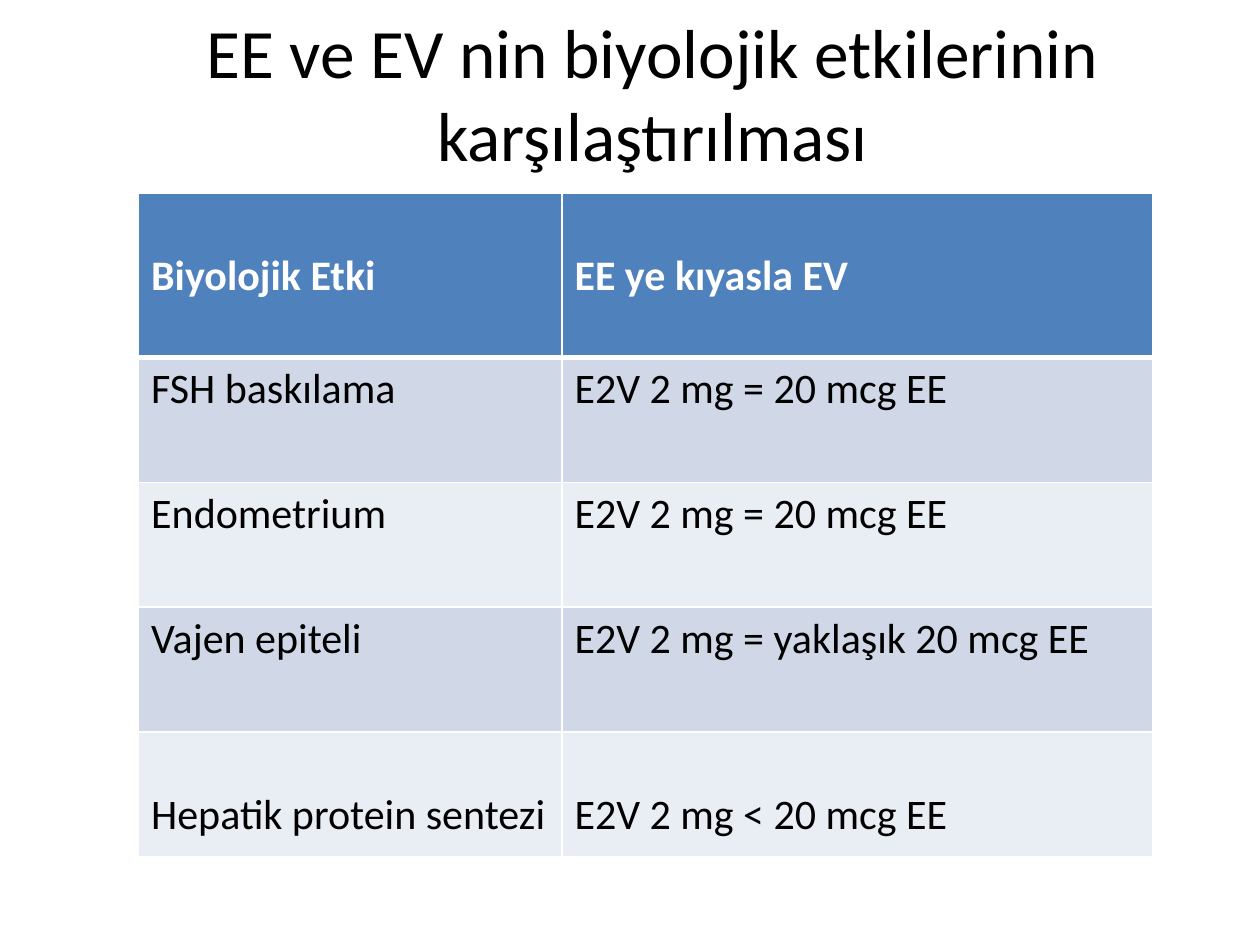
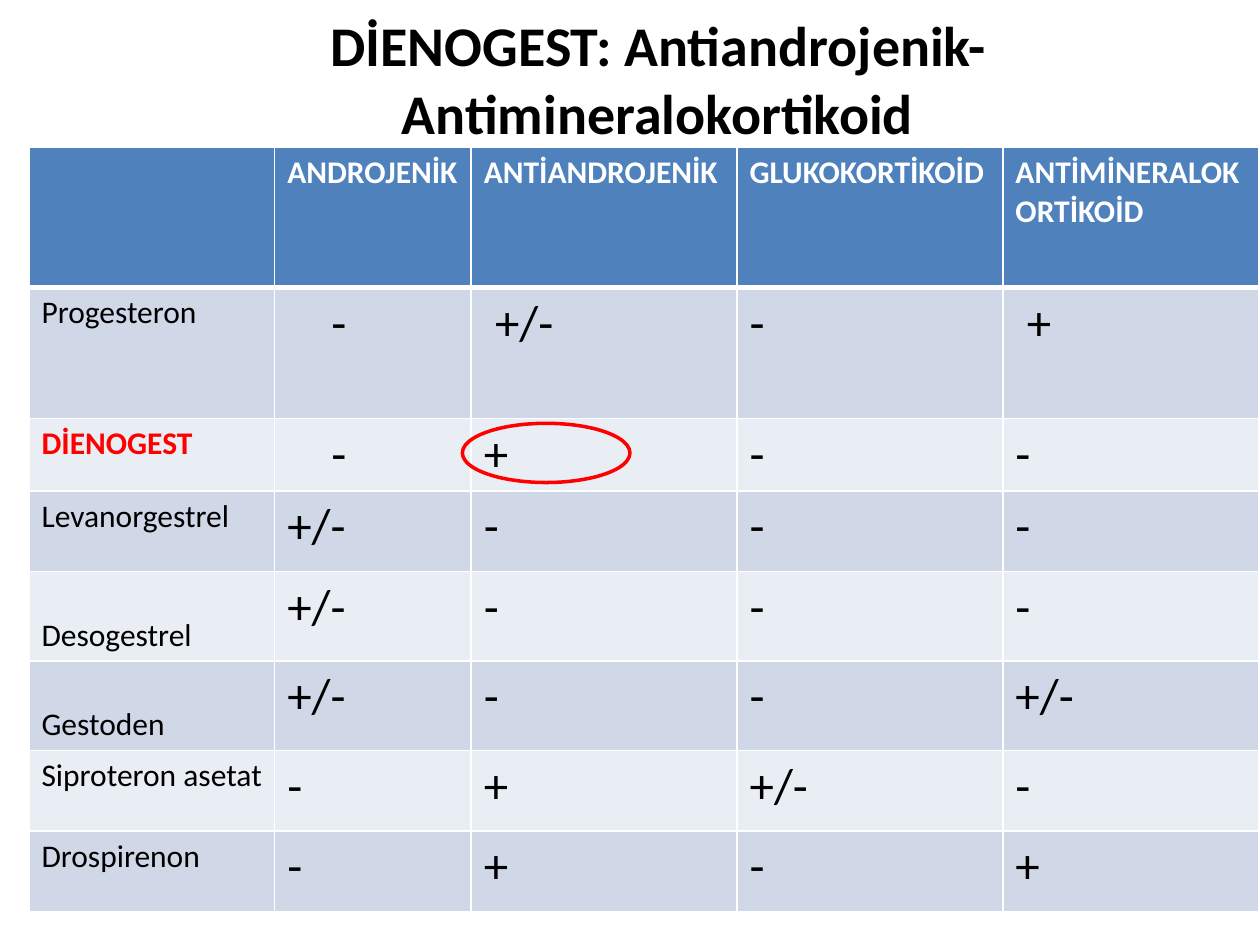
from dataclasses import dataclass
from typing import NamedTuple

from lxml import etree
from pptx import Presentation
from pptx import util as u
from pptx.dml.color import RGBColor
from pptx.enum import shapes, text
from pptx.oxml.ns import qn

SLIDE_WIDTH, SLIDE_HEIGHT = u.Inches(10), u.Inches(7.5)
GRID_COLUMNS, GRID_ROWS = 100, 75
TITLE_ONLY = 5


@dataclass(frozen=True)
class Theme:
    font: str = "Calibri"
    ink: str = "000000"
    paper: str = "FFFFFF"
    header: str = "4F81BD"
    bands: tuple[str, str] = ("D0D8E8", "E9EDF4")
    accent: str = "FF0000"
    title: float = 39.6
    compact_title: float = 32
    effect: float = 24
    hormone: float = 18
    sign: float = 28
    line_height: float = 1.22
    rule: float = 1
    header_rule: float = 3
    ring: float = 2


THEME = Theme()


def across(columns: float) -> int:
    return round(SLIDE_WIDTH * columns / GRID_COLUMNS)


def down(rows: float) -> int:
    return round(SLIDE_HEIGHT * rows / GRID_ROWS)


class Area(NamedTuple):
    """A rectangle in grid columns and rows."""
    left: float
    top: float
    width: float
    height: float

    def lengths(self) -> tuple[int, int, int, int]:
        return across(self.left), down(self.top), across(self.width), down(self.height)


class Entry(NamedTuple):
    """Table text; lowered starts one line down, indent is in grid columns."""
    wording: str
    size: float
    color: str = THEME.ink
    bold: bool = False
    lowered: bool = False
    indent: float = 0


class Grid(NamedTuple):
    left: float
    top: float
    columns: list[float]
    rows: list[float]
    entries: list[list[Entry]]


def write(frame, wording: str, *, size: float, color: str = THEME.ink,
          bold: bool = False, align=text.PP_ALIGN.LEFT) -> None:
    paragraph = frame.paragraphs[0]
    paragraph.alignment = align
    run = paragraph.add_run()
    run.text = wording
    run.font.name = THEME.font
    run.font.size = u.Pt(size)
    run.font.bold = bold
    run.font.color.rgb = RGBColor.from_string(color)


def add_titled_slide(deck, wording: str, area: Area, *, size: float, bold: bool = False):
    slide = deck.slides.add_slide(deck.slide_layouts[TITLE_ONLY])
    title = slide.shapes.title
    title.left, title.top, title.width, title.height = area.lengths()
    frame = title.text_frame
    frame.word_wrap = True
    frame.auto_size = text.MSO_AUTO_SIZE.NONE
    frame.vertical_anchor = text.MSO_ANCHOR.MIDDLE
    write(frame, wording, size=size, bold=bold, align=text.PP_ALIGN.CENTER)
    return slide


def rule_cell(cell, *, top: float, bottom: float) -> None:
    properties = cell._tc.get_or_add_tcPr()
    widths = {"lnL": THEME.rule, "lnR": THEME.rule, "lnT": top, "lnB": bottom}
    for side, width in widths.items():
        line = etree.SubElement(properties, qn(f"a:{side}"), w=str(u.Pt(width)))
        fill = etree.SubElement(line, qn("a:solidFill"))
        etree.SubElement(fill, qn("a:srgbClr"), val=THEME.paper)


def fill_cell(cell, entry: Entry, row: int) -> None:
    rule_cell(cell, top=THEME.header_rule if row == 1 else THEME.rule,
              bottom=THEME.header_rule if row == 0 else THEME.rule)
    cell.fill.solid()
    color = THEME.bands[(row - 1) % 2] if row else THEME.header
    cell.fill.fore_color.rgb = RGBColor.from_string(color)
    if entry.lowered:
        cell.margin_top += u.Pt(entry.size * THEME.line_height)
    cell.margin_left += across(entry.indent)
    if entry.wording:
        write(cell.text_frame, entry.wording, size=entry.size,
              color=entry.color, bold=entry.bold)


def add_grid(slide, grid: Grid) -> None:
    area = Area(grid.left, grid.top, sum(grid.columns), sum(grid.rows))
    table = slide.shapes.add_table(len(grid.rows), len(grid.columns), *area.lengths()).table
    for column, width in zip(table.columns, grid.columns):
        column.width = across(width)
    for row, height in zip(table.rows, grid.rows):
        row.height = down(height)
    for row, entries in enumerate(grid.entries):
        for column, entry in enumerate(entries):
            fill_cell(table.cell(row, column), entry, row)


def add_ring(slide, area: Area) -> None:
    ring = slide.shapes.add_shape(shapes.MSO_SHAPE.OVAL, *area.lengths())
    ring.shadow.inherit = False
    ring.fill.background()
    ring.line.color.rgb = RGBColor.from_string(THEME.accent)
    ring.line.width = u.Pt(THEME.ring)


def header_row(*wordings: str, size: float, lowered: bool = False) -> list[Entry]:
    return [Entry(wording, size, THEME.paper, True, lowered) for wording in wordings]


def effect_row(effect: str, comparison: str, lowered: bool = False) -> list[Entry]:
    return [Entry(wording, THEME.effect, lowered=lowered) for wording in (effect, comparison)]


def hormone_row(hormone: str, signs: str, *, indents: tuple[float, ...] = (0, 0, 0, 0),
                lowered: bool = False, marked: bool = False) -> list[Entry]:
    """Name a hormone and its four signs, which are split at spaces."""
    color = THEME.accent if marked else THEME.ink
    name = Entry(hormone, THEME.hormone, color, marked, lowered)
    return [name] + [Entry(sign, THEME.sign, indent=indent)
                     for sign, indent in zip(signs.split(), indents)]


def add_effects_slide(deck) -> None:
    slide = add_titled_slide(deck, "EE ve EV nin biyolojik etkilerinin karşılaştırılması",
                             Area(8.6, 3, 86.4, 8.7), size=THEME.title)
    add_grid(slide, Grid(11, 15.3, [33.6, 46.9], [13.1] + [9.9] * 4, [
        header_row("Biyolojik Etki", "EE ye kıyasla EV", size=THEME.effect, lowered=True),
        effect_row("FSH baskılama", "E2V 2 mg = 20 mcg EE"),
        effect_row("Endometrium", "E2V 2 mg = 20 mcg EE"),
        effect_row("Vajen epiteli", "E2V 2 mg = yaklaşık 20 mcg EE"),
        effect_row("Hepatik protein sentezi", "E2V 2 mg < 20 mcg EE", lowered=True),
    ]))


def add_dienogest_slide(deck) -> None:
    slide = add_titled_slide(deck, "DİENOGEST: Antiandrojenik-Antimineralokortikoid",
                             Area(9.4, 3, 85.6, 6.4), size=THEME.compact_title, bold=True)
    add_grid(slide, Grid(
        2.3, 11.7, [19.5, 15.6, 21.1, 21.1, 20.3],
        [11.1, 10.4, 5.7, 6.4, 7.1, 7.1, 6.4, 6.4], [
            header_row("", "ANDROJENİK", "ANTİANDROJENİK", "GLUKOKORTİKOİD",
                       "ANTİMİNERALOKORTİKOİD", size=THEME.hormone),
            hormone_row("Progesteron", "- +/- - +", indents=(3.5, 0.9, 0, 0.9)),
            hormone_row("DİENOGEST", "- + - -", indents=(3.5, 0, 0, 0), marked=True),
            hormone_row("Levanorgestrel", "+/- - - -"),
            hormone_row("Desogestrel", "+/- - - -", lowered=True),
            hormone_row("Gestoden", "+/- - - +/-", lowered=True),
            hormone_row("Siproteron asetat", "- + +/- -"),
            hormone_row("Drospirenon", "- + - +"),
        ]))
    add_ring(slide, Area(36.7, 33.6, 13.3, 4.7))


def main() -> None:
    deck = Presentation()
    deck.slide_width, deck.slide_height = SLIDE_WIDTH, SLIDE_HEIGHT
    add_effects_slide(deck)
    add_dienogest_slide(deck)
    deck.save("out.pptx")


if __name__ == "__main__":
    main()
